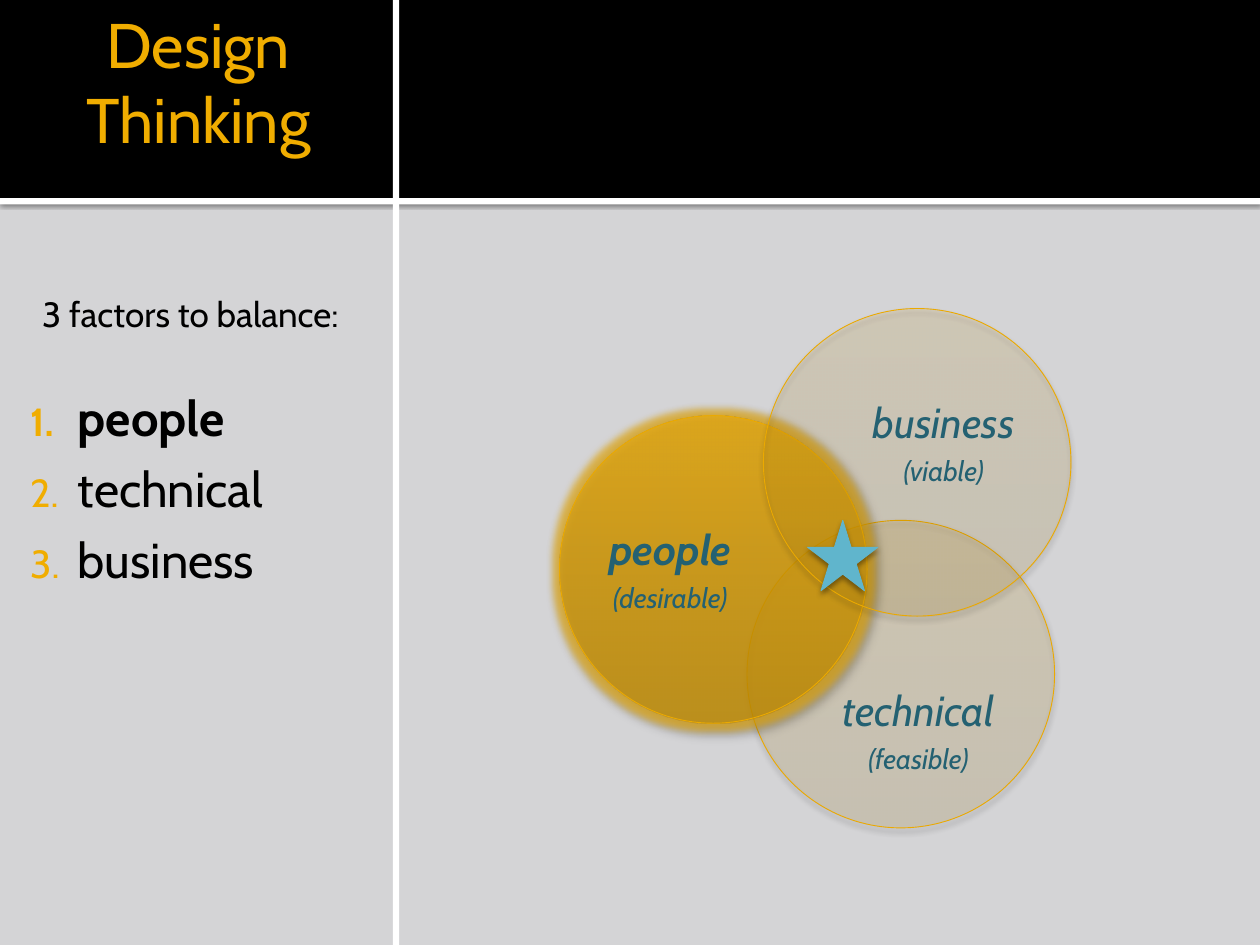
from dataclasses import dataclass
from typing import Optional

from lxml.etree import SubElement
from pptx import Presentation
from pptx.dml.color import RGBColor
from pptx.enum.shapes import MSO_SHAPE as Preset
from pptx.enum.text import MSO_ANCHOR as Anchor, PP_ALIGN as Align
from pptx.oxml import parse_xml
from pptx.oxml.ns import nsdecls, qn
from pptx.util import Cm, Pt

COLORS = {
    "background": "D4D4D6",
    "band": "000000",
    "rule": "FFFFFF",
    "accent": "F0AD00",
    "body": "000000",
    "label": "246172",
    "star": "60B5CC",
    "outline": "EBA900",
    "shadow": "000000",
}
GRADIENT = ((0, "AE7D00"), (55, "CC9300"), (100, "EEAB00"))
FONT = "Cabin"
DIAMETER = 6.2
STAR_SIZE = 1.42
LABEL_SIZE = (4.47, 2.29)


@dataclass(frozen=True)
class Shadow:
    opacity: int
    blur: float
    distance: float
    angle: int


SOFT = Shadow(38, 3.1, 2, 90)


@dataclass(frozen=True)
class Factor:
    name: str
    quality: str
    circle: tuple[float, float]
    label: tuple[float, float]
    opacity: int
    shadow: Shadow = SOFT
    glow: Optional[float] = None
    bold: bool = False


FACTORS = (
    Factor("technical", "(feasible)", (15.06, 10.49), (16.28, 13.46), 12),
    Factor("people", "(desirable)", (11.28, 8.38), (11.28, 10.21), 50,
           Shadow(40, 4, 3, 45), 8, True),
    Factor("business", "(viable)", (15.39, 6.22), (16.79, 7.65), 11),
)


def rgb(key: str) -> RGBColor:
    return RGBColor.from_string(COLORS[key])


def add_tint(parent, color: str, opacity: int) -> None:
    tint = SubElement(parent, qn("a:srgbClr"), val=color)
    SubElement(tint, qn("a:alpha"), val=str(opacity * 1000))


def add_effects(shape, shadow: Shadow, glow: Optional[float] = None) -> None:
    effects = shape._element.spPr.find(qn("a:effectLst"))
    if glow:
        halo = SubElement(effects, qn("a:glow"), rad=str(Pt(glow)))
        add_tint(halo, COLORS["accent"], 60)
    outer = SubElement(effects, qn("a:outerShdw"), blurRad=str(Pt(shadow.blur)),
                       dist=str(Pt(shadow.distance)), dir=str(shadow.angle * 60000),
                       algn="ctr", rotWithShape="0")
    add_tint(outer, COLORS["shadow"], shadow.opacity)


def add_figure(slide, preset, left: float, top: float, width: float, height: float,
               fill: Optional[str] = None, line: Optional[str] = None):
    figure = slide.shapes.add_shape(preset, Cm(left), Cm(top), Cm(width), Cm(height))
    figure.shadow.inherit = False
    if fill:
        figure.fill.solid()
        figure.fill.fore_color.rgb = rgb(fill)
    if line:
        figure.line.color.rgb = rgb(line)
        figure.line.width = Pt(0.5)
    else:
        figure.line.fill.background()
    return figure


def add_circle(slide, factor: Factor) -> None:
    circle = add_figure(slide, Preset.OVAL, *factor.circle, DIAMETER, DIAMETER,
                        line="outline")
    gradient = parse_xml(f'<a:gradFill {nsdecls("a")} rotWithShape="1"><a:gsLst/>'
                         '<a:lin ang="16200000" scaled="0"/></a:gradFill>')
    for position, color in GRADIENT:
        stop = SubElement(gradient[0], qn("a:gs"), pos=str(position * 1000))
        add_tint(stop, color, factor.opacity)
    circle._element.spPr.find(qn("a:prstGeom")).addnext(gradient)
    add_effects(circle, factor.shadow, factor.glow)


def add_frame(slide, left: float, top: float, width: float, height: float,
              insets: tuple = (0.25, 0.13, 0.25, 0.13), anchor=Anchor.TOP):
    frame = slide.shapes.add_textbox(Cm(left), Cm(top), Cm(width), Cm(height)).text_frame
    frame.word_wrap = True
    frame.vertical_anchor = anchor
    (frame.margin_left, frame.margin_top,
     frame.margin_right, frame.margin_bottom) = map(Cm, insets)
    return frame


def write(frame, text: str, *, size: float, color: str, bold: bool = False,
          italic: bool = False, align=Align.CENTER, spacing: float = 1.0,
          before: float = 0, numbered: bool = False) -> None:
    first = frame.paragraphs[0]
    paragraph = frame.add_paragraph() if first.runs else first
    paragraph.alignment = align
    paragraph.line_spacing = spacing
    paragraph.space_before = Pt(before)
    run = paragraph.add_run()
    run.text = text
    run.font.name = FONT
    run.font.size = Pt(size)
    run.font.bold = bold
    run.font.italic = italic
    run.font.color.rgb = rgb(color)
    if numbered:
        properties = paragraph._p.get_or_add_pPr()
        properties.set("marL", str(Cm(0.96)))
        properties.set("indent", str(Cm(-0.96)))
        number_color = SubElement(properties, qn("a:buClr"))
        SubElement(number_color, qn("a:srgbClr"), val=COLORS["accent"])
        SubElement(properties, qn("a:buSzPct"), val="80000")
        SubElement(properties, qn("a:buFont"), typeface=FONT)
        SubElement(properties, qn("a:buAutoNum"), type="arabicPeriod")


def main() -> None:
    deck = Presentation()
    deck.slide_width, deck.slide_height = Cm(25.4), Cm(19.05)
    slide = deck.slides.add_slide(deck.slide_layouts[6])
    slide.background.fill.solid()
    slide.background.fill.fore_color.rgb = rgb("background")

    rule = add_figure(slide, Preset.RECTANGLE, 0, 3.99, 25.4, 0.13, "rule")
    add_effects(rule, Shadow(60, 2.5, 0.8, 90))
    add_figure(slide, Preset.RECTANGLE, 0, 0, 25.4, 3.99, "band")
    add_figure(slide, Preset.RECTANGLE, 7.92, 0, 0.13, 19.05, "rule")

    title = add_frame(slide, 0.46, 0.43, 7.01, 2.72, (0.2, 0.13, 0.13, 0), Anchor.BOTTOM)
    write(title, "Design Thinking", size=36, color="accent")

    summary = add_frame(slide, 0.46, 4.8, 6.86, 12.7, (0.15, 1.09, 0.25, 0.13))
    write(summary, "3 factors to balance:", size=20, color="body")
    for index, name in enumerate(("people", "technical", "business")):
        write(summary, name, size=28, color="body", bold=index == 0, align=Align.LEFT,
              spacing=1.2, before=0 if index else 24, numbered=True)

    for factor in FACTORS:
        add_circle(slide, factor)
    star = add_figure(slide, Preset.STAR_5_POINT, 16.28, 10.49, STAR_SIZE, STAR_SIZE,
                      "star", "star")
    add_effects(star, SOFT)

    for factor in FACTORS:
        label = add_frame(slide, *factor.label, *LABEL_SIZE)
        write(label, factor.name, size=24, color="label", bold=factor.bold,
              italic=True, spacing=1.2)
        write(label, factor.quality, size=16, color="label", italic=True, spacing=1.2)

    deck.save("out.pptx")


if __name__ == "__main__":
    main()
